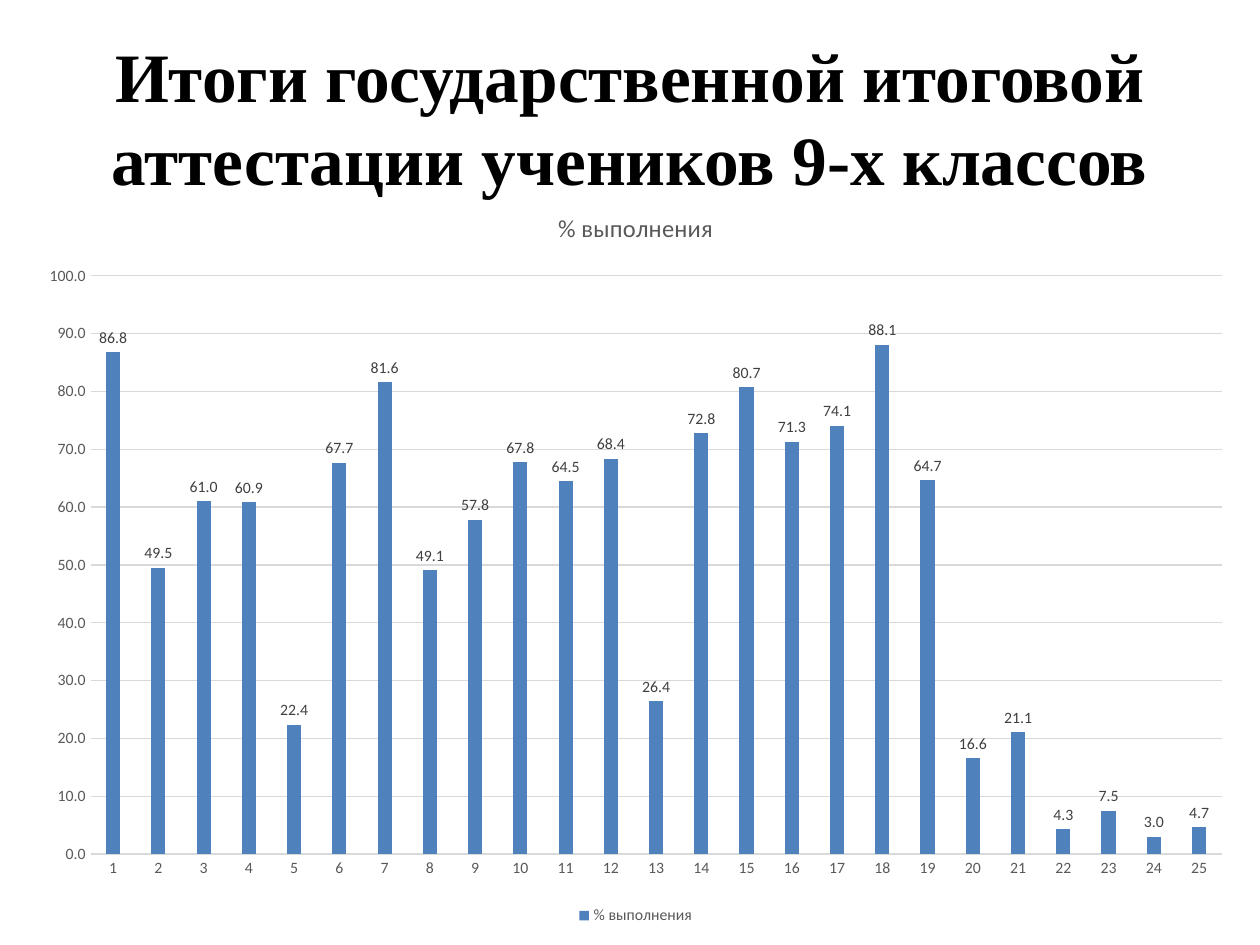
from pptx import Presentation
from pptx.chart.data import CategoryChartData
from pptx.dml.color import RGBColor
from pptx.enum.chart import XL_CHART_TYPE as ChartType
from pptx.enum.chart import XL_LABEL_POSITION as LabelPos
from pptx.enum.chart import XL_LEGEND_POSITION as LegendPos
from pptx.enum.chart import XL_TICK_MARK as TickMark
from pptx.enum.text import MSO_ANCHOR, MSO_AUTO_SIZE, PP_ALIGN
from pptx.util import Inches, Pt

BLACK = RGBColor(0x00, 0x00, 0x00)
DARK = RGBColor(0x40, 0x40, 0x40)
GREY = RGBColor(0x59, 0x59, 0x59)
RULE = RGBColor(0xD9, 0xD9, 0xD9)
BLUE = RGBColor(0x4F, 0x81, 0xBD)

WIDTH, HEIGHT = Inches(10), Inches(7.5)
# Left, top, width and height as shares of the slide
TITLE_BOX = (0.05, 0.04, 0.9, 1 / 6)
CHART_BOX = (0.02, 0.196, 0.969, 0.788)

TITLE = "Итоги государственной итоговой аттестации учеников 9-х классов"
SERIES = "% выполнения"
RESULTS = [86.8, 49.5, 61.0, 60.9, 22.4, 67.7, 81.6, 49.1, 57.8,
           67.8, 64.5, 68.4, 26.4, 72.8, 80.7, 71.3, 74.1, 88.1,
           64.7, 16.6, 21.1, 4.3, 7.5, 3.0, 4.7]


def place(box):
    """Turn shares of the slide into lengths."""
    x, y, w, h = box
    return int(x * WIDTH), int(y * HEIGHT), int(w * WIDTH), int(h * HEIGHT)


def set_font(font, size, color, name="Calibri", bold=False):
    font.size, font.name, font.bold = Pt(size), name, bold
    font.color.rgb = color


def set_rule(line):
    line.color.rgb = RULE
    line.width = Pt(0.75)


def add_title(s, box):
    sp = s.shapes.title
    sp.left, sp.top, sp.width, sp.height = place(box)
    tf = sp.text_frame
    tf.word_wrap = True
    tf.auto_size = MSO_AUTO_SIZE.NONE
    tf.vertical_anchor = MSO_ANCHOR.MIDDLE
    p = tf.paragraphs[0]
    p.alignment = PP_ALIGN.CENTER
    r = p.add_run()
    r.text = TITLE
    set_font(r.font, 39.6, BLACK, "Times New Roman", True)


def format_axes(chart):
    cat, val = chart.category_axis, chart.value_axis
    for axis in (cat, val):
        axis.major_tick_mark = axis.minor_tick_mark = TickMark.NONE
        set_font(axis.tick_labels.font, 9, GREY)
    set_rule(cat.format.line)
    val.format.line.fill.background()
    val.minimum_scale, val.maximum_scale, val.major_unit = 0, 100, 10
    val.tick_labels.number_format = "0.0"
    val.tick_labels.number_format_is_linked = False
    set_rule(val.major_gridlines.format.line)


def format_columns(plot):
    plot.gap_width, plot.overlap = 219, -27
    plot.vary_by_categories = False
    fill = plot.series[0].format.fill
    fill.solid()
    fill.fore_color.rgb = BLUE
    labels = plot.series[0].data_labels
    labels.show_value = True
    labels.position = LabelPos.OUTSIDE_END
    labels.number_format = "0.0"
    labels.number_format_is_linked = False
    set_font(labels.font, 9, DARK)


def add_results_chart(s, box):
    data = CategoryChartData(number_format="0.0")
    data.categories = [str(n) for n in range(1, len(RESULTS) + 1)]
    data.add_series(SERIES, RESULTS)
    chart = s.shapes.add_chart(
        ChartType.COLUMN_CLUSTERED, *place(box), data).chart
    set_font(chart.font, 10, BLACK)

    r = chart.chart_title.text_frame.paragraphs[0].add_run()
    r.text = SERIES
    set_font(r.font, 14, GREY)
    chart.chart_title.include_in_layout = False

    chart.has_legend = True
    chart.legend.position = LegendPos.BOTTOM
    chart.legend.include_in_layout = False
    set_font(chart.legend.font, 9, GREY)

    format_axes(chart)
    format_columns(chart.plots[0])


def main():
    prs = Presentation()
    prs.slide_width, prs.slide_height = WIDTH, HEIGHT
    s = prs.slides.add_slide(prs.slide_layouts[5])
    add_title(s, TITLE_BOX)
    add_results_chart(s, CHART_BOX)
    prs.save("out.pptx")


if __name__ == "__main__":
    main()
